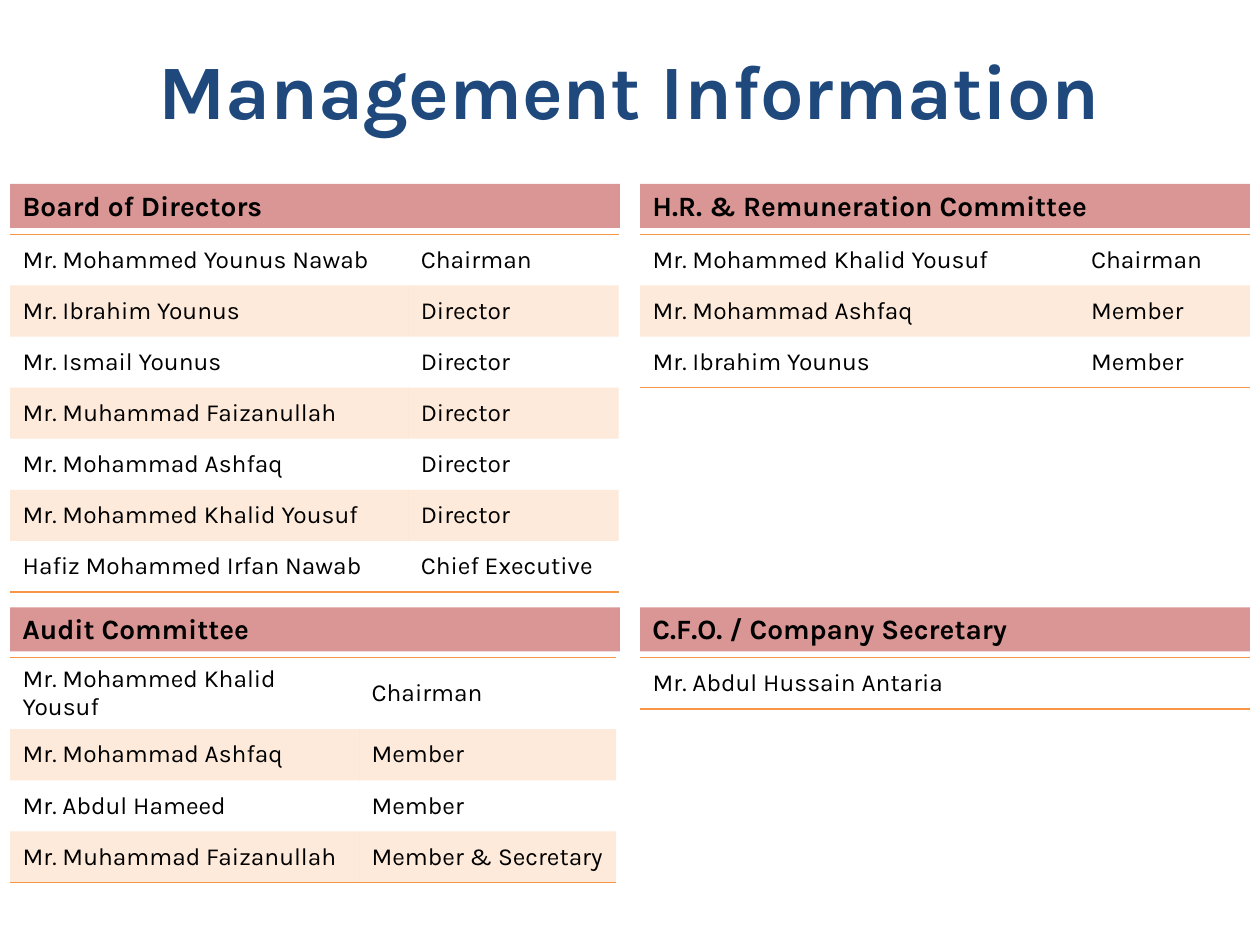
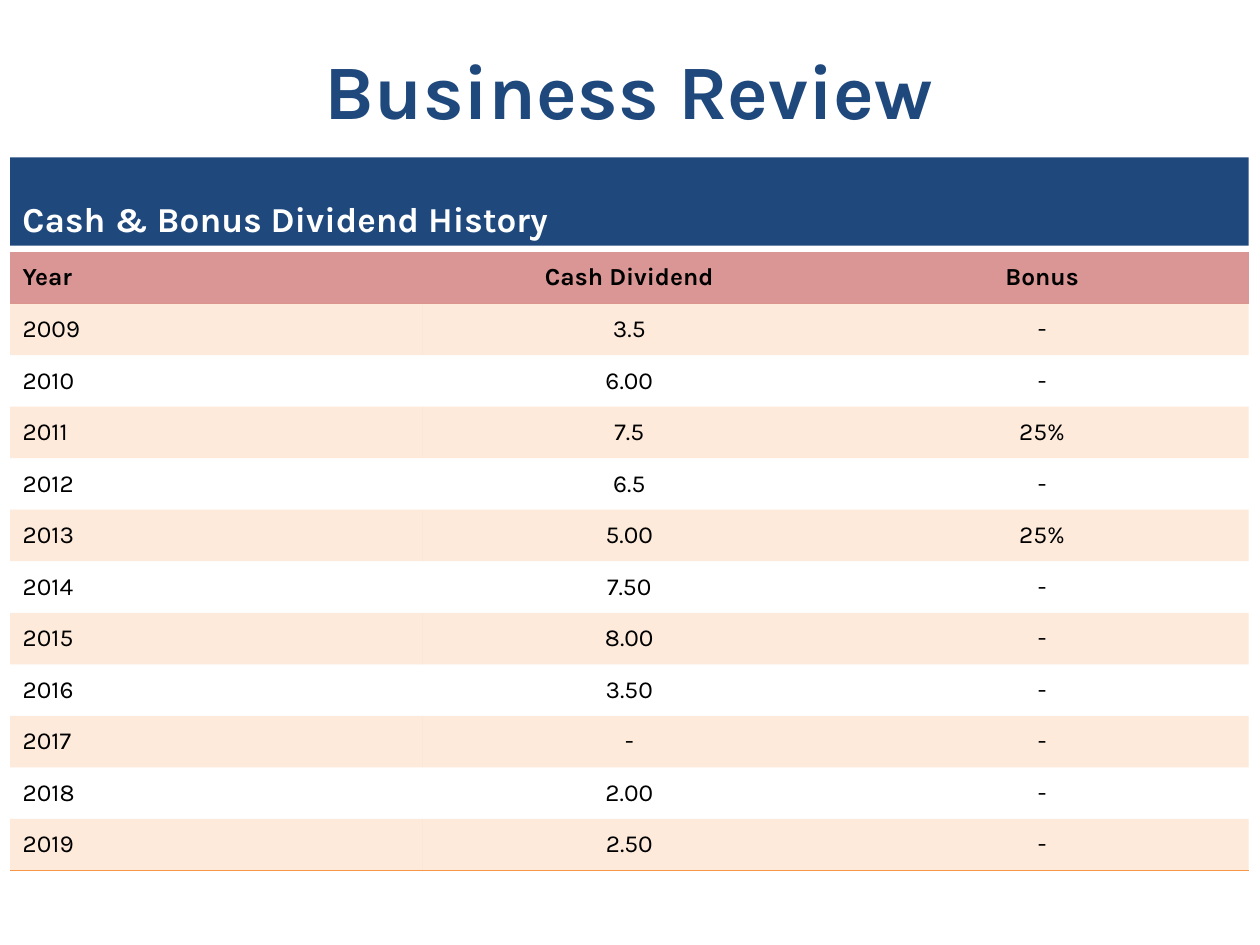
from lxml import etree
from pptx import Presentation
from pptx.dml.color import RGBColor
from pptx.enum.shapes import MSO_SHAPE
from pptx.enum.text import MSO_ANCHOR, PP_ALIGN
from pptx.oxml.ns import qn
from pptx.util import Inches, Pt

RECT = MSO_SHAPE.RECTANGLE
MIDDLE, BOTTOM = MSO_ANCHOR.MIDDLE, MSO_ANCHOR.BOTTOM
LEFT, CENTER = PP_ALIGN.LEFT, PP_ALIGN.CENTER

FONT = "Karla"
NAVY, ROSE, ORANGE = "1F497D", "D99694", "F79646"
BLACK, WHITE = "000000", "FFFFFF"
PLAIN = "{2D5ABB26-0587-4C30-8999-92F81FD0307C}"  # no style, no grid

# Grid in inches
EDGE, FULL, HALF = 0.08, 9.83, 4.84
RIGHT = 5.08
BAND, GAP = 0.35, 0.05
ROW = 2.84 / 7
TOPS = [1.46, 4.82]


def color(text):
    return RGBColor.from_string(text)


def write(frame, text, size, ink, bold=False, align=LEFT):
    para = frame.paragraphs[0]
    para.text = text
    para.alignment = align
    font = para.font
    font.name, font.size, font.bold = FONT, Pt(size), bold
    font.color.rgb = color(ink)


# Content: column, row, heading, column widths, members
panels = [
    (EDGE, 0, "Board of Directors", [3.16, 1.67], [
        ["Mr. Mohammed Younus Nawab", "Chairman"],
        ["Mr. Ibrahim Younus", "Director"],
        ["Mr. Ismail Younus", "Director"],
        ["Mr. Muhammad Faizanullah", "Director"],
        ["Mr. Mohammad Ashfaq", "Director"],
        ["Mr. Mohammed Khalid Yousuf", "Director"],
        ["Hafiz Mohammed Irfan Nawab", "Chief Executive"],
    ]),
    (RIGHT, 0, "H.R. & Remuneration Committee", [3.48, 1.36], [
        ["Mr. Mohammed Khalid Yousuf", "Chairman"],
        ["Mr. Mohammad Ashfaq", "Member"],
        ["Mr. Ibrahim Younus", "Member"],
    ]),
    (EDGE, 1, "Audit Committee", [2.77, 2.04], [
        ["Mr. Mohammed Khalid Yousuf", "Chairman"],
        ["Mr. Mohammad Ashfaq", "Member"],
        ["Mr. Abdul Hameed", "Member"],
        ["Mr. Muhammad Faizanullah", "Member & Secretary"],
    ]),
    (RIGHT, 1, "C.F.O. / Company Secretary", [HALF], [
        ["Mr. Abdul Hussain Antaria"],
    ]),
]
history = [
    ["Year", "Cash Dividend", "Bonus"],
    ["2009", "3.5", "-"],
    ["2010", "6.00", "-"],
    ["2011", "7.5", "25%"],
    ["2012", "6.5", "-"],
    ["2013", "5.00", "25%"],
    ["2014", "7.50", "-"],
    ["2015", "8.00", "-"],
    ["2016", "3.50", "-"],
    ["2017", "-", "-"],
    ["2018", "2.00", "-"],
    ["2019", "2.50", "-"],
]

# Each block: left, top, width, band height, band fill, ink, size,
# heading, column widths, row height, rows, has a header row
people = [
    (x, TOPS[level], HALF, BAND, ROSE, BLACK, 16, head, cols, ROW, rows, False)
    for x, level, head, cols, rows in panels
]
review = [
    (EDGE, 1.25, FULL, 0.7, NAVY, WHITE, 20, "Cash & Bonus Dividend History",
     [FULL / 3] * 3, 4.91 / len(history), history, True),
]

deck = Presentation()
deck.slide_width, deck.slide_height = Inches(10), Inches(7.5)

for title, blocks in [("Management Information", people),
                      ("Business Review", review)]:
    slide = deck.slides.add_slide(deck.slide_layouts[6])

    # Title
    box = slide.shapes.add_textbox(
        Inches(EDGE), Inches(EDGE), Inches(FULL), Inches(1.25))
    box.text_frame.word_wrap = True
    box.text_frame.vertical_anchor = MIDDLE
    write(box.text_frame, title, 44, NAVY, True, CENTER)

    for (x, y, wide, tall, fill, ink, size, head,
         cols, step, rows, header) in blocks:
        # Heading band
        band = slide.shapes.add_shape(
            RECT, Inches(x), Inches(y), Inches(wide), Inches(tall))
        band.shadow.inherit = False
        band.fill.solid()
        band.fill.fore_color.rgb = color(fill)
        band.line.fill.background()
        band.text_frame.word_wrap = True
        band.text_frame.vertical_anchor = BOTTOM
        write(band.text_frame, head, size, ink, True)

        # Table
        last = len(rows) - 1
        grid = slide.shapes.add_table(
            len(rows), len(cols), Inches(x), Inches(y + tall + GAP),
            Inches(sum(cols)), Inches(step * len(rows))).table
        grid.first_row = grid.horz_banding = False
        grid._tbl.tblPr.find(qn("a:tableStyleId")).text = PLAIN
        for col, width in zip(grid.columns, cols):
            col.width = Inches(width)

        for r, row in enumerate(rows):
            grid.rows[r].height = Inches(step)
            top = header and r == 0
            for c, text in enumerate(row):
                cell = grid.cell(r, c)
                cell.vertical_anchor = MIDDLE
                align = CENTER if header and c else LEFT
                write(cell.text_frame, text, 14, BLACK, top, align)

                # Rules above the first row and below the last
                props = cell._tc.get_or_add_tcPr()
                for side, shown in [("a:lnT", r == 0 and not header),
                                    ("a:lnB", r == last)]:
                    if shown:
                        line = etree.SubElement(props, qn(side), w=str(Pt(1)))
                        solid = etree.SubElement(line, qn("a:solidFill"))
                        etree.SubElement(solid, qn("a:srgbClr"), val=ORANGE)

                # Header fill, or a pale tint on every second row
                if top or r % 2:
                    cell.fill.solid()
                    cell.fill.fore_color.rgb = color(ROSE if top else ORANGE)
                    if not top:
                        tint = props.find(qn("a:solidFill"))[0]
                        etree.SubElement(tint, qn("a:alpha"), val="20000")
                else:
                    cell.fill.background()

deck.save("out.pptx")
